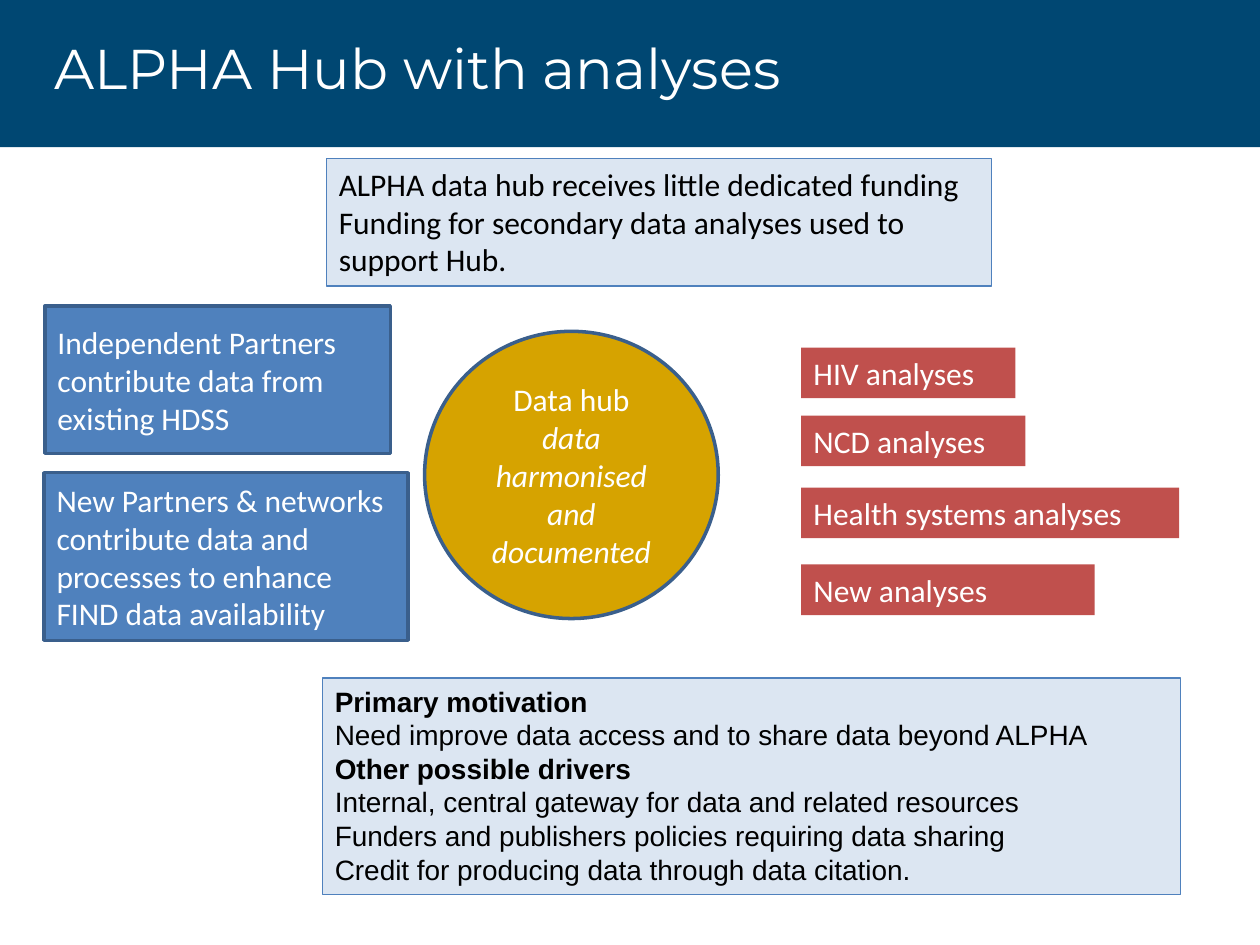
from pptx import Presentation
from pptx.dml.color import RGBColor
from pptx.enum.shapes import MSO_SHAPE
from pptx.enum.text import MSO_ANCHOR, PP_ALIGN
from pptx.util import Cm, Pt

COLORS = {
    "navy": "004772", "white": "FFFFFF", "black": "000000", "gold": "D6A300",
    "red": "C0504D", "pale": "DCE6F2", "blue": "4F81BD", "outline": "3A5F8C",
}


def color(name):
    return RGBColor.from_string(COLORS[name])


def add_box(bounds, fill, lines=(), line=None, width=0.75, text="white", size=18,
            font="Calibri", anchor=MSO_ANCHOR.TOP, align=PP_ALIGN.LEFT,
            kind=MSO_SHAPE.RECTANGLE):
    shape = slide.shapes.add_shape(kind, *[Cm(value) for value in bounds])
    shape.shadow.inherit = False
    shape.fill.solid()
    shape.fill.fore_color.rgb = color(fill)
    if line:
        shape.line.color.rgb = color(line)
        shape.line.width = Pt(width)
    else:
        shape.line.fill.background()
    frame = shape.text_frame
    frame.word_wrap = True
    frame.vertical_anchor = anchor
    for index, content in enumerate(lines):
        paragraph = frame.add_paragraph() if index else frame.paragraphs[0]
        paragraph.text = content
        paragraph.alignment = align
        paragraph.font.name = font
        paragraph.font.size = Pt(size)
        paragraph.font.color.rgb = color(text)
    return shape


presentation = Presentation()
presentation.slide_width = Cm(25.4)
presentation.slide_height = Cm(19.05)
slide = presentation.slides.add_slide(presentation.slide_layouts[6])

# Title band
add_box((0, 0, 25.4, 2.97), "navy")
title = slide.shapes.add_textbox(Cm(0.84), Cm(0.56), Cm(17.3), Cm(1.85))
title.text_frame.word_wrap = True
paragraph = title.text_frame.paragraphs[0]
paragraph.text = "ALPHA Hub with analyses"
paragraph.font.name = "Montserrat"
paragraph.font.size = Pt(32)
paragraph.font.color.rgb = color("white")

# Central hub
hub = add_box((8.56, 6.68, 5.92, 5.79), "gold",
              ["Data hub", "data harmonised and documented"],
              line="outline", width=2, anchor=MSO_ANCHOR.MIDDLE,
              align=PP_ALIGN.CENTER, kind=MSO_SHAPE.OVAL)
hub.text_frame.paragraphs[1].font.italic = True

# Analyses
for label, top, width in [
    ("HIV analyses", 7.01, 4.32),
    ("NCD analyses", 8.38, 4.52),
    ("Health systems analyses", 9.83, 7.62),
    ("New analyses", 11.38, 5.92),
]:
    add_box((16.15, top, width, 1.02), "red", [label])

# Motivation, with bold headings
headings = ("Primary motivation", "Other possible drivers")
motivation = add_box((6.5, 13.67, 17.3, 4.37), "pale", [
    headings[0],
    "Need improve data access and to share data beyond ALPHA",
    headings[1],
    "Internal, central gateway for data and related resources",
    "Funders and publishers policies requiring data sharing",
    "Credit for producing data through data citation.",
], line="blue", text="black", size=16, font="Arial")
for paragraph in motivation.text_frame.paragraphs:
    paragraph.font.bold = paragraph.text in headings

# Funding
add_box((6.58, 3.2, 13.41, 2.57), "pale", [
    "ALPHA data hub receives little dedicated funding",
    "Funding for secondary data analyses used to support Hub.",
], line="blue", text="black")

# Partners
for bounds, label in [
    ((0.91, 6.17, 6.96, 2.97),
     "Independent Partners contribute data from existing HDSS"),
    ((0.89, 9.53, 7.34, 3.38),
     "New Partners & networks contribute data and processes to enhance "
     "FIND data availability"),
]:
    add_box(bounds, "blue", [label], line="outline", width=2,
            anchor=MSO_ANCHOR.MIDDLE)

presentation.save("out.pptx")
